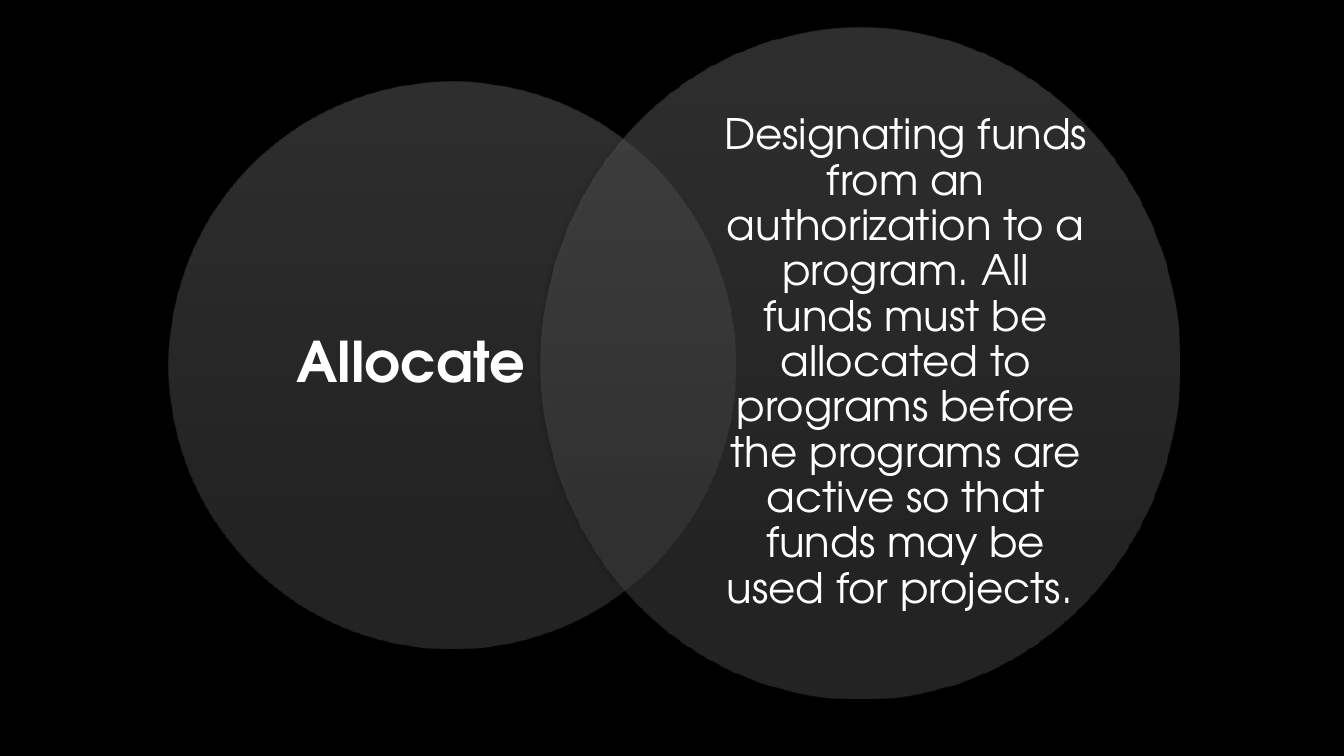
"""Build a slide that defines the term Allocate in two overlapping circles."""
from dataclasses import dataclass

from lxml import etree
from pptx import Presentation
from pptx.dml.color import RGBColor
from pptx.enum.shapes import MSO_SHAPE
from pptx.enum.text import MSO_ANCHOR, PP_ALIGN
from pptx.oxml.ns import qn
from pptx.util import Pt

ELLIPSE = MSO_SHAPE.OVAL
MIDDLE = MSO_ANCHOR.MIDDLE
CENTER = PP_ALIGN.CENTER


@dataclass(frozen=True)
class Theme:
    """Colours, font and type sizes of the slide."""
    background: RGBColor = RGBColor(0x00, 0x00, 0x00)
    text: RGBColor = RGBColor(0xFF, 0xFF, 0xFF)
    gradient: tuple = ((0, RGBColor(0x5C, 0x5C, 0x5C)), (0.78, RGBColor(0x45, 0x45, 0x45)))
    opacity: int = 50
    shadow: str = "000000"
    shadow_opacity: int = 48
    font: str = "TeX Gyre Adventor"
    term_size: int = 40
    definition_size: int = 30


THEME = Theme()


def set_values(target, values):
    """Set each attribute of target from a dict of format values."""
    for name, value in values.items():
        setattr(target, name, value)


def add_alpha(color, percent):
    """Give a colour element an opacity in percent."""
    etree.SubElement(color, qn("a:alpha"), val=str(percent * 1000))


def add_shadow(circle):
    """Drop a soft shadow straight below a circle."""
    circle.shadow.inherit = False
    effects = circle._element.spPr.find(qn("a:effectLst"))
    shadow = etree.SubElement(
        effects, qn("a:outerShdw"), blurRad=str(Pt(4.5)), dist=str(Pt(1.5)),
        dir=str(90 * 60000), rotWithShape="0")
    add_alpha(etree.SubElement(shadow, qn("a:srgbClr"), val=THEME.shadow), THEME.shadow_opacity)


def add_circle(slide, left, top, width, height):
    """Add a translucent gradient circle without an outline."""
    circle = slide.shapes.add_shape(ELLIPSE, Pt(left), Pt(top), Pt(width), Pt(height))
    circle.fill.gradient()
    circle.fill.gradient_angle = 270
    for stop, (position, color) in zip(circle.fill.gradient_stops, THEME.gradient):
        stop.color.rgb = color
        stop.position = position
    for color in circle._element.spPr.iter(qn("a:srgbClr")):
        add_alpha(color, THEME.opacity)
    circle.line.fill.background()
    add_shadow(circle)


def add_label(slide, text, left, top, width, height, size, bold=False):
    """Add centred text in a box without margins."""
    label = slide.shapes.add_textbox(Pt(left), Pt(top), Pt(width), Pt(height))
    frame = label.text_frame
    set_values(frame, {
        "word_wrap": True, "vertical_anchor": MIDDLE, "margin_left": 0,
        "margin_top": 0, "margin_right": 0, "margin_bottom": 0})
    paragraph = frame.paragraphs[0]
    set_values(paragraph, {"alignment": CENTER, "line_spacing": 0.9})
    run = paragraph.add_run()
    run.text = text
    set_values(run.font, {"name": THEME.font, "size": Pt(size), "bold": bold})
    run.font.color.rgb = THEME.text


def main():
    """Build and save the slide."""
    deck = Presentation()
    set_values(deck, {"slide_width": Pt(960), "slide_height": Pt(540)})
    slide = deck.slides.add_slide(deck.slide_layouts[6])
    slide.background.fill.solid()
    slide.background.fill.fore_color.rgb = THEME.background

    add_circle(slide, 120.4, 58.2, 405, 405)
    add_label(slide, "Allocate", 177, 106, 233, 309, THEME.term_size, bold=True)
    add_circle(slide, 386, 20, 456.5, 479)
    add_label(
        slide,
        "Designating funds from an authorization to a program. All funds must be "
        "allocated to programs before the programs are active so that funds may be "
        "used for projects. ",
        515.5, 76.3, 262.8, 365.8, THEME.definition_size)

    deck.save("out.pptx")


if __name__ == "__main__":
    main()
